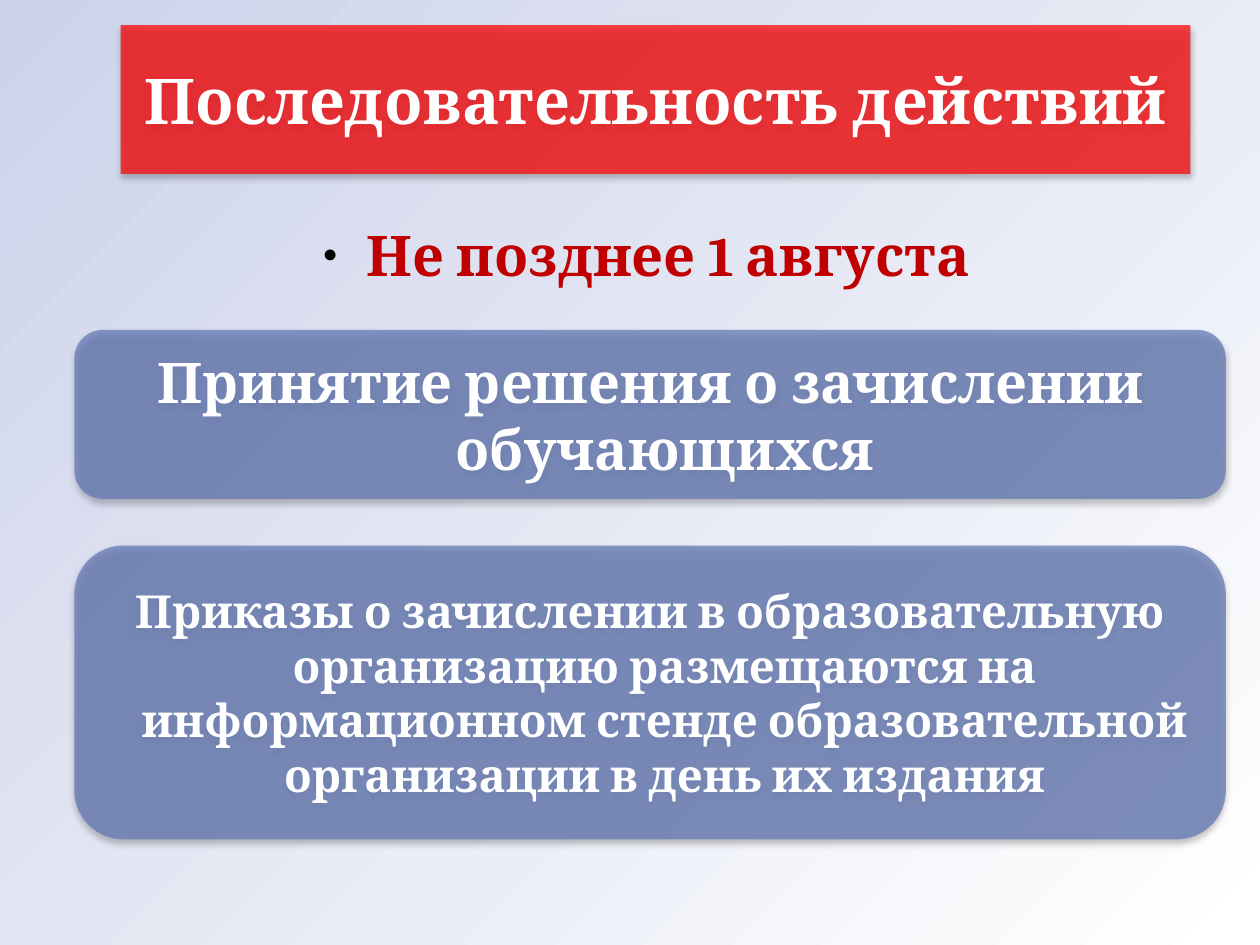
from lxml.etree import SubElement
from pptx import Presentation
from pptx.dml.color import RGBColor
from pptx.enum.shapes import MSO_SHAPE as Preset
from pptx.enum.text import MSO_ANCHOR as Anchor, MSO_AUTO_SIZE as AutoSize, PP_ALIGN as Align
from pptx.oxml.ns import qn
from pptx.util import Pt


def paint(color, value):
    color.rgb = RGBColor.from_string(value)


def child(parent, tag, **attributes):
    return SubElement(parent, qn(tag), attributes)


class Deck:
    font = "Cambria"
    white, red, blue, dark_red, black = "FFFFFF", "FF0000", "6076B4", "C00000", "000000"
    background = ("CCD2E9", "FFFFFF")
    card_opacity, shadow_opacity = "71000", "32000"

    def __init__(self, width, height):
        self.file = Presentation()
        self.file.slide_width, self.file.slide_height = Pt(width), Pt(height)
        self.slide = None

    def add_slide(self):
        self.slide = self.file.slides.add_slide(self.file.slide_layouts[1])
        fill = self.slide.background.fill
        fill.gradient()
        fill.gradient_angle = 315
        for position, (stop, value) in enumerate(zip(fill.gradient_stops, self.background)):
            stop.position = position
            paint(stop.color, value)

    def place(self, shape, box):
        shape.left, shape.top, shape.width, shape.height = map(Pt, box)

    def set_text(self, shape, text, size, color, margins=(7.2, 3.6), anchor=Anchor.MIDDLE,
                 indent=(0, 0)):
        frame = shape.text_frame
        frame.text = text
        frame.word_wrap = True
        frame.auto_size = AutoSize.NONE
        frame.vertical_anchor = anchor
        frame.margin_left = frame.margin_right = Pt(margins[0])
        frame.margin_top = frame.margin_bottom = Pt(margins[1])
        paragraph = frame.paragraphs[0]
        paragraph.alignment = Align.CENTER
        properties = paragraph._p.get_or_add_pPr()
        left, first = indent
        properties.set("marL", str(Pt(left)))
        properties.set("indent", str(Pt(first)))
        font = paragraph.runs[0].font
        font.name, font.size, font.bold = self.font, Pt(size), True
        paint(font.color, color)
        return paragraph

    def style_card(self, shape, color):
        """Translucent fill, no outline and a soft shadow below."""
        shape.fill.solid()
        paint(shape.fill.fore_color, color)
        properties = shape._element.spPr
        child(properties.find(".//" + qn("a:srgbClr")), "a:alpha", val=self.card_opacity)
        shape.line.fill.background()
        shape.shadow.inherit = False
        shadow = child(properties.find(qn("a:effectLst")), "a:outerShdw", blurRad=str(Pt(3.5)),
                       dist=str(Pt(2.2)), dir="5400000", rotWithShape="0")
        child(child(shadow, "a:srgbClr", val=self.black), "a:alpha", val=self.shadow_opacity)

    def title(self, text, box):
        heading = self.slide.shapes.title
        self.place(heading, box)
        geometry = child(heading._element.spPr, "a:prstGeom", prst="roundRect")
        child(geometry, "a:avLst")
        self.style_card(heading, self.red)
        self.set_text(heading, text, 36, self.white)

    def deadline(self, text, box):
        body = self.slide.placeholders[1]
        self.place(body, box)
        paragraph = self.set_text(body, text, 32, self.dark_red, (0, 0), Anchor.TOP, (34, -25))
        paragraph.space_before = Pt(14.2)
        properties = paragraph._p.get_or_add_pPr()
        child(child(properties, "a:buClr"), "a:srgbClr", val=self.black)
        child(properties, "a:buSzPct", val="45000")
        child(properties, "a:buChar", char="●")

    def step(self, text, box, size):
        card = self.slide.shapes.add_shape(Preset.ROUNDED_RECTANGLE, *map(Pt, box))
        self.style_card(card, self.blue)
        self.set_text(card, text, size, self.white, indent=(17, -16.5))


def main():
    deck = Deck(720, 540)
    deck.add_slide()
    left, width = 42.5, 658
    deck.title("Последовательность действий", (69, 14.4, 611.3, 85))
    deck.deadline("Не позднее 1 августа", (36, 126, width, 43))
    deck.step("Принятие решения о зачислении обучающихся", (left, 188.6, width, 96.5), 32)
    deck.step("Приказы о зачислении в образовательную организацию размещаются на "
              "информационном стенде образовательной организации в день их издания",
              (left, 311.8, width, 167.8), 26)
    deck.file.save("out.pptx")


if __name__ == "__main__":
    main()
